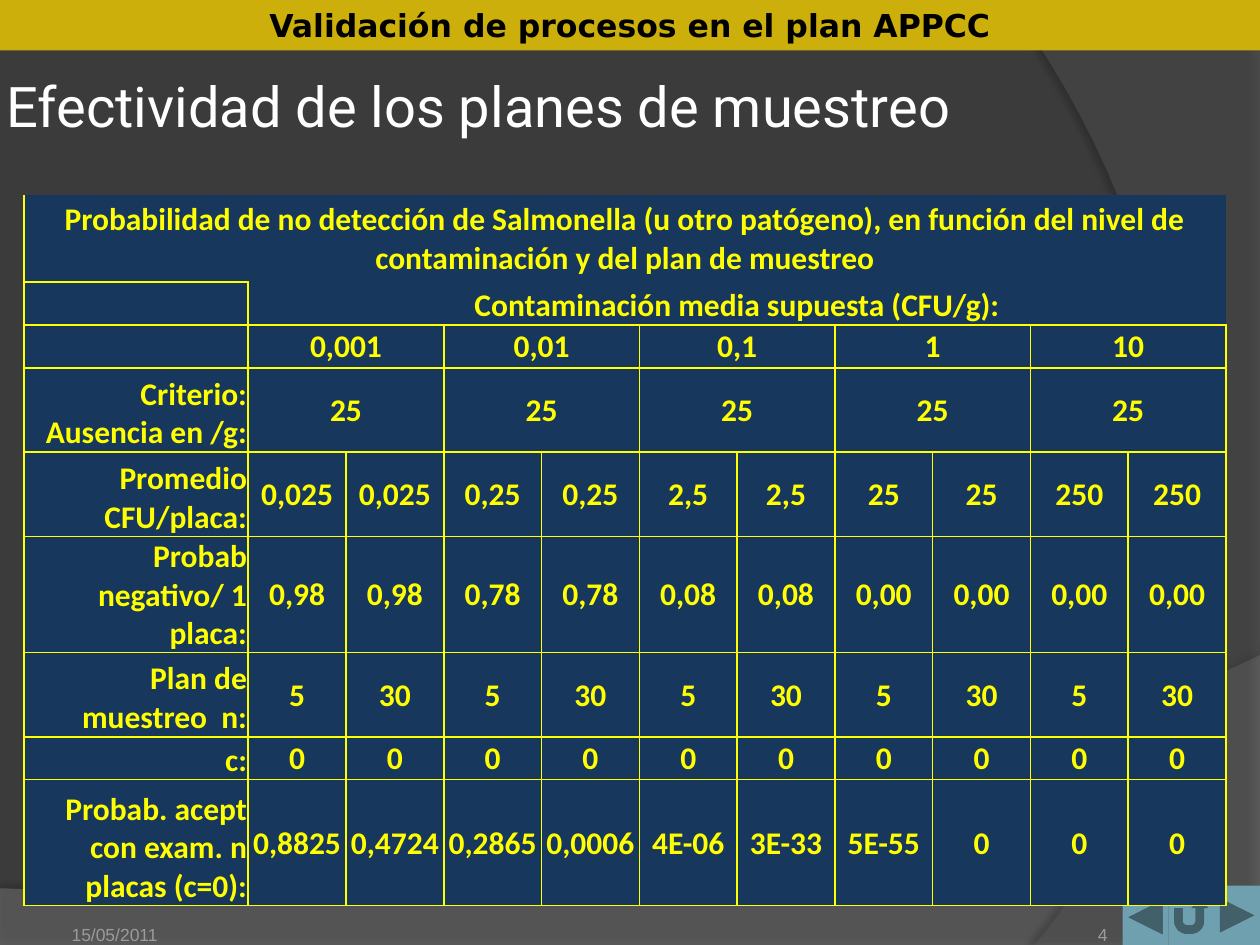
from lxml.etree import SubElement
from pptx import Presentation
from pptx.dml.color import RGBColor
from pptx.enum.shapes import MSO_SHAPE
from pptx.enum.text import MSO_ANCHOR, PP_ALIGN
from pptx.oxml import parse_xml
from pptx.oxml.ns import nsdecls, qn
from pptx.util import Inches, Pt

YELLOW = "FFFF00"
NAVY = "17375D"
GREY = "9D9B9A"
SIDES = {"left": "a:lnL", "right": "a:lnR", "top": "a:lnT", "bottom": "a:lnB"}
COLUMN_WIDTHS = [1.78] + [0.776] * 10
ROW_HEIGHTS = [0.69, 0.34, 0.34, 0.67, 0.67, 0.92, 0.67, 0.34, 1]
TABLE_TITLE = ("Probabilidad de no detección de Salmonella (u otro patógeno), "
               "en función del nivel de contaminación y del plan de muestreo")
TABLE_ROWS = [
    [TABLE_TITLE],
    ["", "Contaminación media supuesta (CFU/g):"],
    ["", "0,001", "0,01", "0,1", "1", "10"],
    ["Criterio: Ausencia en /g:"] + ["25"] * 5,
    ["Promedio CFU/placa:", "0,025", "0,025", "0,25", "0,25", "2,5", "2,5",
     "25", "25", "250", "250"],
    ["Probab negativo/ 1 placa:", "0,98", "0,98", "0,78", "0,78", "0,08", "0,08"]
    + ["0,00"] * 4,
    ["Plan de muestreo  n:"] + ["5", "30"] * 5,
    ["c:"] + ["0"] * 10,
    ["Probab. acept con exam. n placas (c=0):", "0,8825", "0,4724", "0,2865",
     "0,0006", "4E-06", "3E-33", "5E-55", "0", "0", "0"],
]


def color(value):
    """Turn a hex string into a colour."""
    return RGBColor.from_string(value)


def paint(shape, fill):
    """Give a shape a plain fill without line or shadow."""
    shape.shadow.inherit = False
    shape.fill.solid()
    shape.fill.fore_color.rgb = color(fill)
    shape.line.fill.background()


def write(text_frame, text, size, font, hex_color, bold=False, align=PP_ALIGN.LEFT):
    """Set one paragraph of text and its format."""
    text_frame.text = text
    paragraph = text_frame.paragraphs[0]
    paragraph.alignment = align
    for run in paragraph.runs:
        run.font.size = Pt(size)
        run.font.name = font
        run.font.bold = bold
        run.font.color.rgb = color(hex_color)


def set_margins(target, left, top, right, bottom):
    """Set the inner margins of a text frame or cell in inches."""
    target.margin_left, target.margin_top = Inches(left), Inches(top)
    target.margin_right, target.margin_bottom = Inches(right), Inches(bottom)


def curve(start, control_1, control_2, end, steps=40):
    """Return points along a cubic curve."""
    points = []
    for step in range(steps + 1):
        t = step / steps
        weights = ((1 - t) ** 3, 3 * t * (1 - t) ** 2, 3 * t * t * (1 - t), t ** 3)
        points.append(tuple(
            sum(weight * value for weight, value in zip(weights, axis))
            for axis in zip(start, control_1, control_2, end)))
    return points


def add_swoosh(slide, points, fill, opacity, shadow_opacity, distance, direction):
    """Draw a translucent background outline with a soft shadow."""
    scaled = [(Inches(x), Inches(y)) for x, y in points]
    builder = slide.shapes.build_freeform(*scaled[0], scale=1.0)
    builder.add_line_segments(scaled[1:], close=True)
    shape = builder.convert_to_shape()
    paint(shape, fill)
    properties = shape.element.spPr
    tint = properties.find(qn("a:solidFill")).find(qn("a:srgbClr"))
    SubElement(tint, qn("a:alpha"), val=str(opacity * 1000))
    properties.find(qn("a:effectLst")).append(parse_xml(
        f'<a:outerShdw {nsdecls("a")} blurRad="{Pt(4)}" dist="{Pt(distance)}" '
        f'dir="{direction * 60000}" rotWithShape="0"><a:srgbClr val="000000">'
        f'<a:alpha val="{shadow_opacity * 1000}"/></a:srgbClr></a:outerShdw>'))


def add_background(slide, width, height):
    """Fill the slide and draw its two curved areas."""
    slide.background.fill.solid()
    slide.background.fill.fore_color.rgb = color("3B3B3B")
    wave = curve((width, 5.2), (5.59, 7.29), (3.91, 7.19), (0, 7.05))
    add_swoosh(slide, [(0, height), (width, height)] + wave, "7F7F7F", 45, 35, 3.5, 270)
    arc = curve((8.21, height), (9.35, 6.19), (10.18, 3), (8, 0))
    add_swoosh(slide, [(width, 0), (width, height)] + arc, "5E5E5E", 40, 45, 4, 180)


def add_header(slide, left, top, width, height):
    """Draw the gold course bar."""
    bar = slide.shapes.add_shape(
        MSO_SHAPE.RECTANGLE, Inches(left), Inches(top), Inches(width), Inches(height))
    paint(bar, "CCAF0A")
    bar.text_frame.vertical_anchor = MSO_ANCHOR.MIDDLE
    write(bar.text_frame, "Validación de procesos en el plan APPCC", 18,
          "DejaVu Sans", "000000", True, PP_ALIGN.CENTER)


def add_navigation(slide, left, bottom, width):
    """Draw the three action buttons side by side."""
    buttons = [(MSO_SHAPE.ACTION_BUTTON_BACK_OR_PREVIOUS, 0.44),
               (MSO_SHAPE.ACTION_BUTTON_RETURN, 0.45),
               (MSO_SHAPE.ACTION_BUTTON_FORWARD_OR_NEXT, 0.47)]
    step = width / len(buttons)
    for index, (kind, height) in enumerate(buttons):
        button = slide.shapes.add_shape(
            kind, Inches(left + index * step), Inches(bottom - height),
            Inches(step), Inches(height))
        paint(button, "6EA0B0")


def add_label(slide, box, margins, anchor, *text_format):
    """Add a wrapped text box."""
    label = slide.shapes.add_textbox(*[Inches(value) for value in box])
    frame = label.text_frame
    frame.word_wrap = True
    frame.vertical_anchor = anchor
    set_margins(frame, *margins)
    write(frame, *text_format)


def set_borders(cell, visible):
    """Draw the named cell sides in yellow and hide the others."""
    properties = cell._tc.get_or_add_tcPr()
    for index, (side, tag) in enumerate(SIDES.items()):
        paint_xml = (f'<a:solidFill><a:srgbClr val="{YELLOW}"/></a:solidFill>'
                     if side in visible else "<a:noFill/>")
        properties.insert(index, parse_xml(
            f'<{tag} {nsdecls("a")} w="{Pt(1)}">{paint_xml}</{tag}>'))


def visible_sides(row, column):
    """Tell which sides of a table cell are drawn."""
    if row == 0:
        return ["left"] if column == 0 else []
    if row == 1 and column > 0:
        return ["left", "bottom"] if column == 1 else ["bottom"]
    return list(SIDES)


def add_probability_table(slide, left, top):
    """Build the table, spreading each row's values over equal spans."""
    columns = len(COLUMN_WIDTHS)
    frame = slide.shapes.add_table(
        len(TABLE_ROWS), columns, Inches(left), Inches(top),
        Inches(sum(COLUMN_WIDTHS)), Inches(sum(ROW_HEIGHTS)))
    table = frame.table
    table.first_row = table.horz_banding = False
    for column, width in zip(table.columns, COLUMN_WIDTHS):
        column.width = Inches(width)
    for row, (values, height) in enumerate(zip(TABLE_ROWS, ROW_HEIGHTS)):
        table.rows[row].height = Inches(height)
        for column in range(columns):
            cell = table.cell(row, column)
            cell.fill.solid()
            cell.fill.fore_color.rgb = color(NAVY)
            set_margins(cell, 0.01, 0.01, 0.01, 0)
            set_borders(cell, visible_sides(row, column))
        span = (columns - 1) // max(len(values) - 1, 1)
        for index, value in enumerate(values):
            column = 0 if index == 0 else 1 + (index - 1) * span
            last = column + span - 1 if index else 0
            if row == 0:
                last = columns - 1
            cell = table.cell(row, column)
            if last > column:
                cell.merge(table.cell(row, last))
            is_row_label = index == 0 and row > 0
            is_low = is_row_label or row == 1
            cell.vertical_anchor = MSO_ANCHOR.BOTTOM if is_low else MSO_ANCHOR.MIDDLE
            write(cell.text_frame, value, 18, "Calibri", YELLOW, True,
                  PP_ALIGN.RIGHT if is_row_label else PP_ALIGN.CENTER)


def main():
    """Build and save the slide."""
    presentation = Presentation()
    presentation.slide_width, presentation.slide_height = Inches(10), Inches(7.5)
    slide = presentation.slides.add_slide(presentation.slide_layouts[6])
    add_background(slide, 10, 7.5)
    add_header(slide, 0, 0, 10, 0.4)
    add_navigation(slide, 8.91, 7.5, 1.09)
    add_label(slide, (0, 0.42, 10, 0.83), (0.05,) * 4, MSO_ANCHOR.MIDDLE,
              "Efectividad de los planes de muestreo", 32, "Roboto", "FFFFFF")
    add_label(slide, (0.47, 7.1, 2.33, 0.4), (0.1, 0.05, 0.1, 0), MSO_ANCHOR.BOTTOM,
              "15/05/2011", 10, "Arial", GREY)
    add_label(slide, (7.96, 7.1, 0.83, 0.4), (0,) * 4, MSO_ANCHOR.BOTTOM,
              "4", 10, "Arial", GREY, False, PP_ALIGN.RIGHT)
    add_probability_table(slide, 0.19, 1.55)
    presentation.save("out.pptx")


if __name__ == "__main__":
    main()
